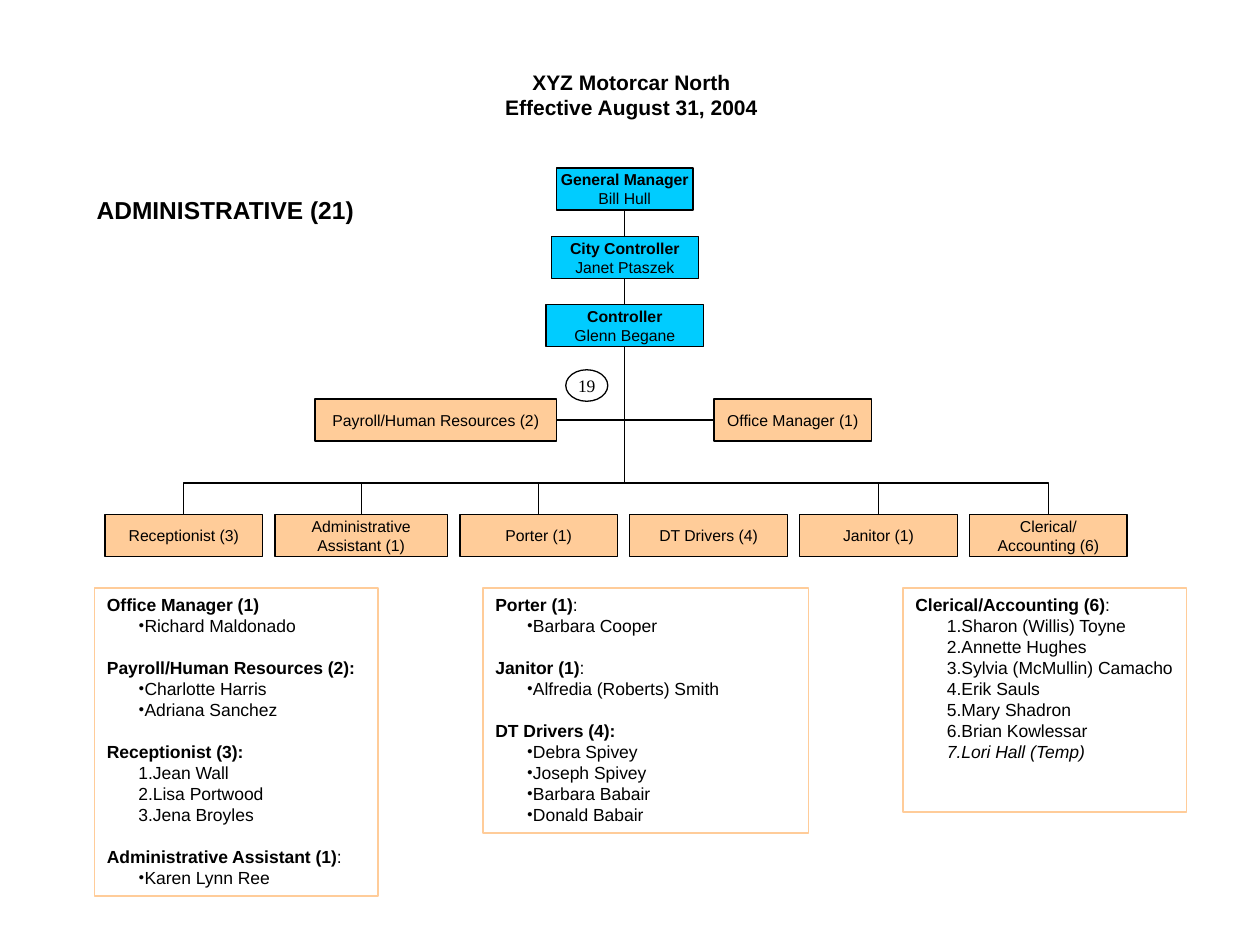
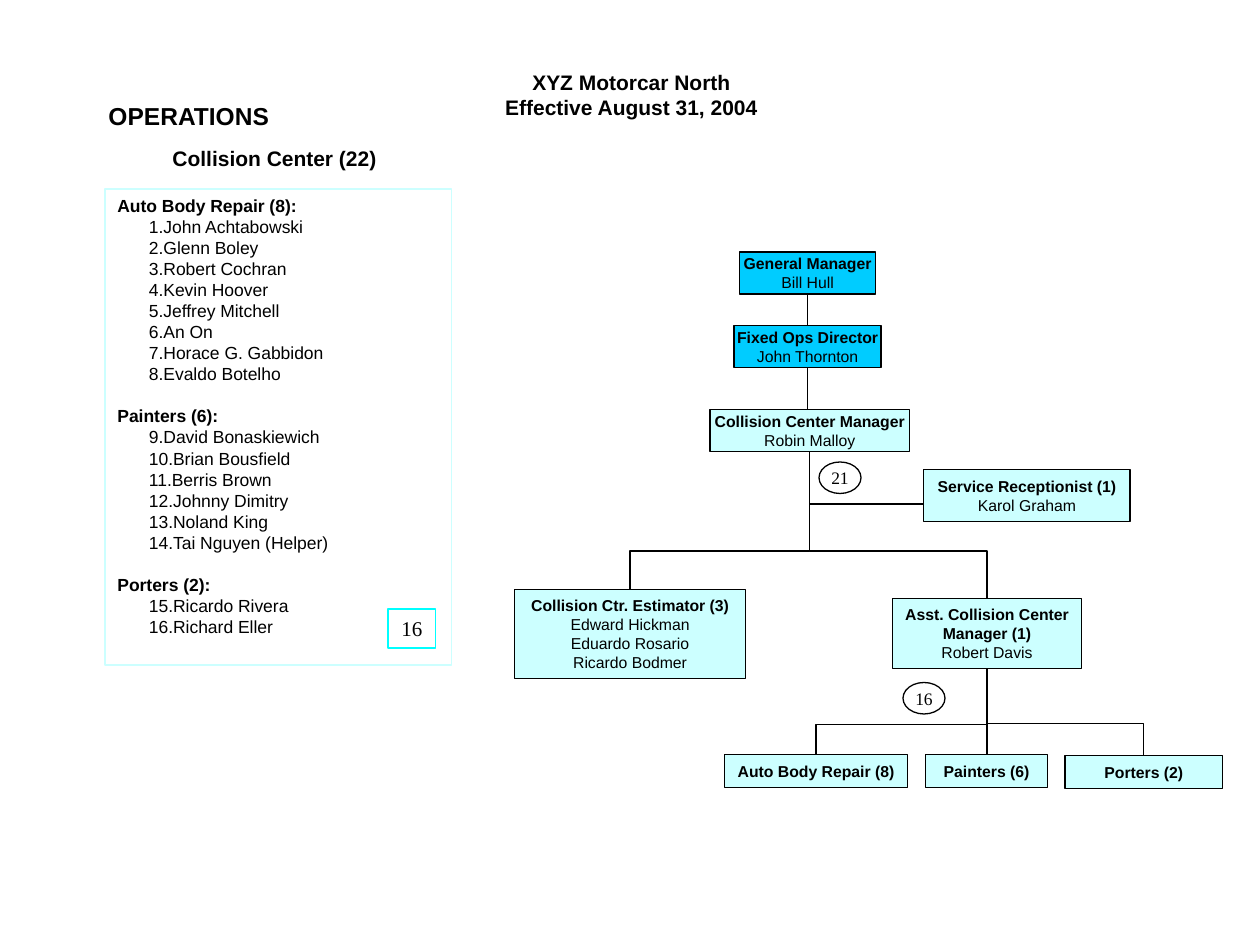
from lxml.etree import SubElement
from pptx import Presentation
from pptx.dml.color import RGBColor
from pptx.enum.shapes import MSO_CONNECTOR as Connector, MSO_SHAPE as Shape
from pptx.enum.text import MSO_ANCHOR as Anchor, PP_ALIGN as Align
from pptx.oxml.ns import qn
from pptx.util import Pt

COLOURS = {
    "ink": "000000",
    "management": "00CCFF",
    "administration": "FFCC99",
    "collision": "CCFFFF",
    "count": "00FFFF",
}
TITLE = "XYZ Motorcar North\nEffective August 31, 2004"
BOX_HEIGHT = 24


def add_panel(slide, box, text="", size=9, bold_lines=0, fill=None, outline=None,
              kind=Shape.RECTANGLE, font="Arial", align=Align.CENTER):
    """Add a shape, or a text box if it has no outline; the first bold_lines are bold."""
    box = [Pt(length) for length in box]
    if outline:
        panel = slide.shapes.add_shape(kind, *box)
        panel.shadow.inherit = False
        panel.line.color.rgb = RGBColor.from_string(COLOURS[outline])
        panel.line.width = Pt(0.75)
        if fill:
            panel.fill.solid()
            panel.fill.fore_color.rgb = RGBColor.from_string(COLOURS[fill])
        else:
            panel.fill.background()
    else:
        panel = slide.shapes.add_textbox(*box)
    frame = panel.text_frame
    frame.word_wrap = True
    frame.margin_left = frame.margin_right = Pt(0 if bold_lines else 3)
    frame.margin_top = frame.margin_bottom = 0
    frame.vertical_anchor = Anchor.MIDDLE if outline else Anchor.TOP
    frame.text = text
    for number, paragraph in enumerate(frame.paragraphs):
        paragraph.alignment = align
        for run in paragraph.runs:
            run.font.name = font
            run.font.size = Pt(size)
            run.font.bold = number < bold_lines
            run.font.color.rgb = RGBColor.from_string(COLOURS["ink"])
    return panel


def add_line(slide, x1, y1, x2, y2, bend=None):
    """Draw a straight line, one "corner" (across, then up), or a branch bent at height bend."""
    ends = x1, y1, x2, y2
    is_branch = bend not in (None, "corner")
    if is_branch:
        # A branch is a level elbow turned a quarter, so its width is the drop
        drop, reach = y2 - y1, abs(x2 - x1)
        left, top = (x1 + x2 - drop) / 2, (y1 + y2 - reach) / 2
        ends = left, top, left + drop, top + reach
    line = slide.shapes.add_connector(Connector.ELBOW if bend else Connector.STRAIGHT,
                                      *[Pt(end) for end in ends])
    line.line.color.rgb = RGBColor.from_string(COLOURS["ink"])
    line.line.width = Pt(0.75)
    properties = line._element.spPr
    SubElement(properties, qn("a:effectLst"))
    geometry = properties.find(qn("a:prstGeom"))
    if bend == "corner":
        geometry.set("prst", "bentConnector2")
    elif is_branch:
        turn = properties.find(qn("a:xfrm"))
        turn.set("rot", "5400000")
        if x2 > x1:
            turn.set("flipV", "1")
        adjustments = geometry.find(qn("a:avLst"))
        if adjustments is None:
            adjustments = SubElement(geometry, qn("a:avLst"))
        SubElement(adjustments, qn("a:gd"), name="adj1",
                   fmla=f"val {round((bend - y1) / drop * 100000)}")


# Administrative: six positions in one row, with a branch to all but the drivers
administrative_boxes = [
    ((180, 228, 138, BOX_HEIGHT), "Payroll/Human Resources (2)", "administration", 0),
    ((408, 228, 90, BOX_HEIGHT), "Office Manager (1)", "administration", 0),
]
administrative_lines = [
    (357, 120, 357, 135),
    (357, 156, 357, 174),
    (318, 240, 357, 198, "corner"),
    (408, 240, 357, 198, "corner"),
]
for top, width, text in [
    (96, 78, "General Manager\nBill Hull"),
    (135, 84, "City Controller\nJanet Ptaszek"),
    (174, 90, "Controller\nGlenn Begane"),
]:
    administrative_boxes.append(
        ((357 - width / 2, top, width, BOX_HEIGHT), text, "management", 1))

left = 60
for position, width in [
    ("Receptionist (3)", 90),
    ("Administrative Assistant (1)", 98.6),
    ("Porter (1)", 90),
    ("DT Drivers (4)", 90),
    ("Janitor (1)", 90),
    ("Clerical/\nAccounting (6)", 90),
]:
    administrative_boxes.append(((left, 294, width, BOX_HEIGHT), position, "administration", 0))
    if position != "DT Drivers (4)":
        administrative_lines.append((357, 198, left + width / 2, 294, 276))
    left += width + 7.1

# A roster section is: bold heading, plain ending, first number (0 for bullets), names
charts = [
    {
        "headings": [((55.2, 111.6, 170, 18), "ADMINISTRATIVE (21)", 14)],
        "lines": administrative_lines,
        "boxes": administrative_boxes,
        "badges": [(323.3, 211.3, "19")],
        "roster_colour": "administration",
        "rosters": [
            ((54, 336, 162, 176), [
                ("Office Manager (1)", "", 0, ["Richard Maldonado"]),
                ("Payroll/Human Resources (2):", "", 0, ["Charlotte Harris", "Adriana Sanchez"]),
                ("Receptionist (3):", "", 1, ["Jean Wall", "Lisa Portwood", "Jena Broyles"]),
                ("Administrative Assistant (1)", ":", 0, ["Karen Lynn Ree"]),
            ]),
            ((276, 336, 186, 140), [
                ("Porter (1)", ":", 0, ["Barbara Cooper"]),
                ("Janitor (1)", ":", 0, ["Alfredia (Roberts) Smith"]),
                ("DT Drivers (4):", "", 0,
                 ["Debra Spivey", "Joseph Spivey", "Barbara Babair", "Donald Babair"]),
            ]),
            ((516, 336, 162, 128), [
                ("Clerical/Accounting (6)", ":", 1,
                 ["Sharon (Willis) Toyne", "Annette Hughes", "Sylvia (McMullin) Camacho",
                  "Erik Sauls", "Mary Shadron", "Brian Kowlessar", "Lori Hall (Temp)"]),
            ]),
        ],
    },
    {
        "headings": [
            ((62, 57.6, 110, 18), "OPERATIONS", 14),
            ((98.6, 83.2, 130, 16), "Collision Center (22)", 12),
        ],
        "lines": [
            (461.5, 168, 461.5, 186),
            (461.5, 210, 461.5, 254),
            (528, 288, 462.5, 288),
            (462.7, 258, 360, 336.8, 315),
            (462.7, 258, 564, 342, 314.8),
            (564, 431, 564, 382),
            (564, 382, 466.3, 431, 414),
            (564, 382, 653.5, 432, 413.4),
        ],
        "boxes": [
            ((422.5, 144, 78, BOX_HEIGHT), "General Manager\nBill Hull", "management", 1),
            ((419.5, 186, 84, BOX_HEIGHT), "Fixed Ops Director\nJohn Thornton", "management", 1),
            ((405.7, 234, 114, BOX_HEIGHT), "Collision Center Manager\nRobin Malloy",
             "collision", 1),
            ((527.8, 268.4, 118, 29.5), "Service Receptionist (1)\nKarol Graham",
             "collision", 1),
            ((294, 336.7, 132, 51),
             "Collision Ctr. Estimator (3)\nEdward Hickman\nEduardo Rosario\nRicardo Bodmer",
             "collision", 1),
            ((510, 342, 108, 40), "Asst. Collision Center Manager (1)\nRobert Davis",
             "collision", 1),
            ((414, 431, 104.5, 19), "Auto Body Repair (8)", "collision", 1),
            ((529, 431, 69.5, 19), "Painters (6)", "collision", 1),
            ((608.6, 431.8, 90, 19), "Porters (2)", "collision", 1),
        ],
        "badges": [(468, 264, "21"), (516, 390, "16")],
        "roster_colour": "collision",
        "rosters": [
            ((60, 108, 198, 272), [
                ("Auto Body Repair (8):", "", 1,
                 ["John Achtabowski", "Glenn Boley", "Robert Cochran", "Kevin Hoover",
                  "Jeffrey Mitchell", "An On", "Horace G. Gabbidon", "Evaldo Botelho"]),
                ("Painters (6):", "", 9,
                 ["David Bonaskiewich", "Brian Bousfield", "Berris Brown", "Johnny Dimitry",
                  "Noland King", "Tai Nguyen (Helper)"]),
                ("Porters (2):", "", 15, ["Ricardo Rivera", "Richard Eller"]),
            ]),
        ],
        "roster_total": ((221.8, 348, 27.2, 22.4), "16"),
    },
]

deck = Presentation()
deck.slide_width, deck.slide_height = Pt(720), Pt(540)

for chart in charts:
    slide = deck.slides.add_slide(deck.slide_layouts[6])
    add_panel(slide, (281.3, 39.6, 159, 29), TITLE, 12, bold_lines=2)
    for box, heading, size in chart["headings"]:
        add_panel(slide, box, heading, size, bold_lines=1, align=Align.LEFT)

    for route in chart["lines"]:
        add_line(slide, *route)
    for box, text, fill, bold_lines in chart["boxes"]:
        add_panel(slide, box, text, bold_lines=bold_lines, fill=fill, outline="ink")
    for left, top, head_count in chart["badges"]:
        add_panel(slide, (left, top, 24, 18), head_count, 10, outline="ink",
                  kind=Shape.OVAL, font="Times New Roman")

    for box, sections in chart["rosters"]:
        entries = [entry for heading, _, _, names in sections for entry in (heading, *names)]
        roster = add_panel(slide, box, "\n".join(entries), 10,
                           outline=chart["roster_colour"], align=Align.LEFT)
        roster.line.width = Pt(1)
        frame = roster.text_frame
        frame.vertical_anchor = Anchor.TOP
        frame.margin_left, frame.margin_right, frame.margin_top = Pt(7.2), 0, Pt(3.6)
        paragraphs = iter(frame.paragraphs)
        for index, (heading, ending, first_number, names) in enumerate(sections):
            title = next(paragraphs)
            title.runs[0].font.bold = True
            if index:
                title.space_before = Pt(12)
            if ending:
                colon = title.add_run()
                colon.text = ending
                colon.font.name, colon.font.size = "Arial", Pt(10)
                colon.font.color.rgb = RGBColor.from_string(COLOURS["ink"])
            for name in names:
                person = next(paragraphs)
                person.level = 1
                person.runs[0].font.italic = name.endswith("(Temp)")
                properties = person._p.get_or_add_pPr()
                properties.set("marL", str(Pt(9)))
                properties.set("indent", str(Pt(9)))
                if first_number:
                    SubElement(properties, qn("a:buAutoNum"), type="arabicPeriod",
                               startAt=str(first_number))
                else:
                    SubElement(properties, qn("a:buFont"), typeface="Times New Roman")
                    SubElement(properties, qn("a:buChar"), char="•")

    if "roster_total" in chart:
        box, total = chart["roster_total"]
        add_panel(slide, box, total, 12, outline="count", font="Times New Roman")

deck.save("out.pptx")
